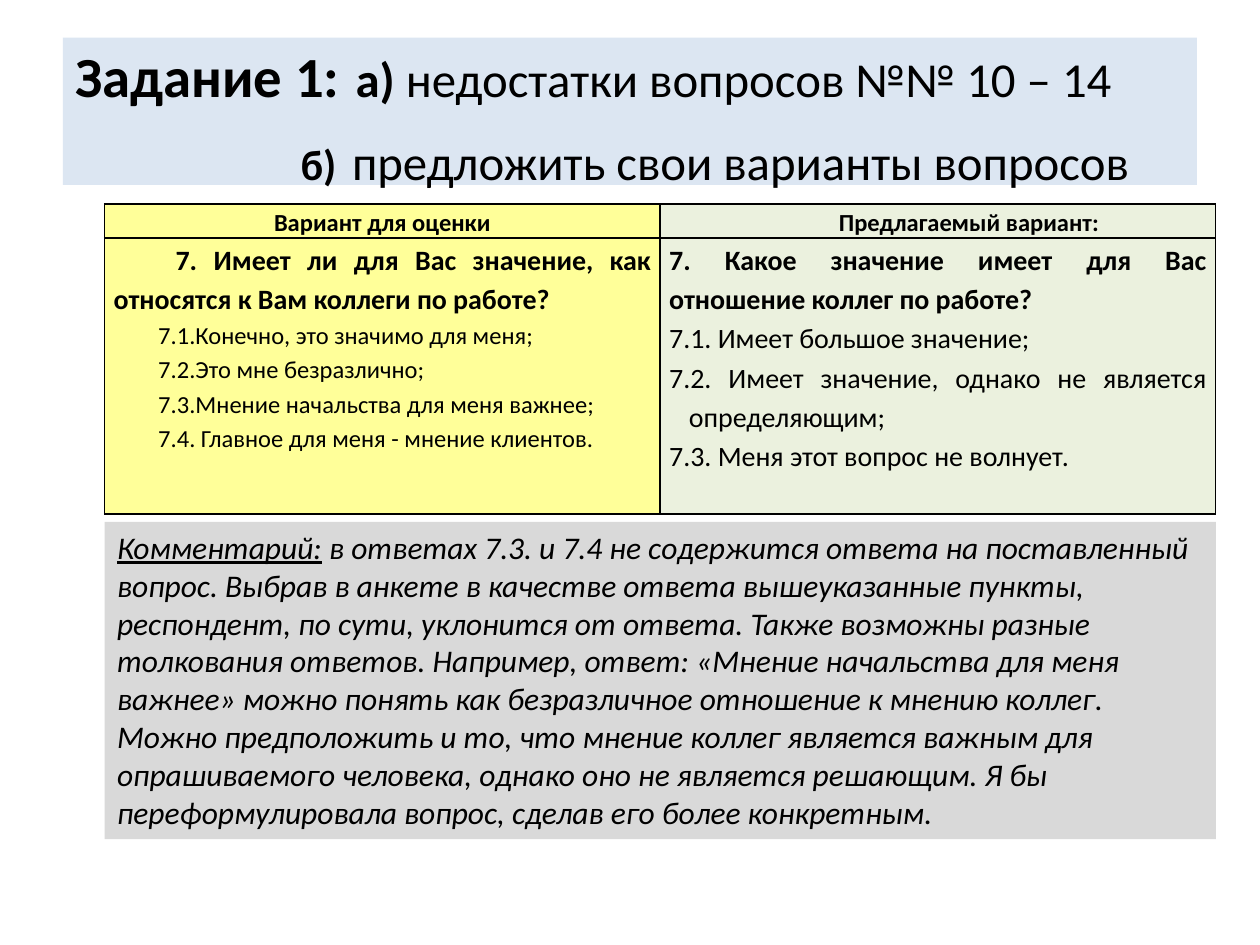
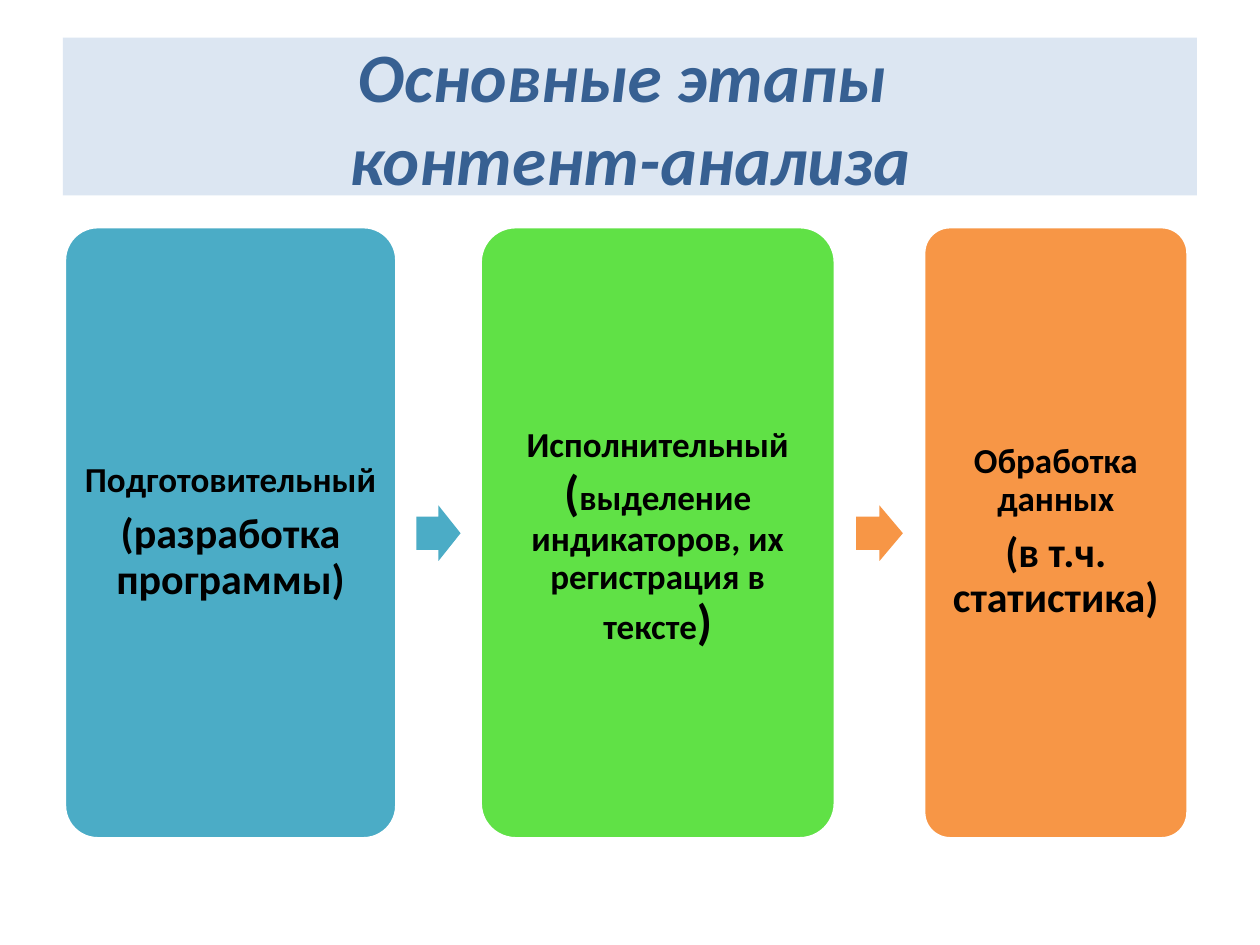
from dataclasses import dataclass

from lxml import etree
from pptx import Presentation
from pptx import util as u
from pptx.dml.color import RGBColor
from pptx.enum import shapes, text
from pptx.oxml import ns

Cm, Pt = u.Cm, u.Pt
ALIGN, KIND = text.PP_ALIGN, shapes.MSO_SHAPE


@dataclass(frozen=True)
class Theme:
    font: str = "Calibri"
    ink: str = "000000"
    paper: str = "FFFFFF"
    band: str = "DCE6F2"
    navy: str = "376092"
    yellow: str = "FFFF99"
    sage: str = "EBF1DE"
    grey: str = "D9D9D9"
    teal: str = "4BACC6"
    green: str = "60E146"
    orange: str = "F79646"
    title: float = 39.6
    task: float = 32.4
    goal: float = 27.9
    mark: float = 24.3
    paren: float = 28
    detail: float = 24
    stage: float = 20
    note: float = 18
    ask: float = 16
    small: float = 14


T = Theme()


def write(para, runs, align=ALIGN.LEFT, left=0, first=0, color=T.ink):
    """Fill a paragraph with runs of (text, size, style letters b, i, u)."""
    para.alignment = align
    if left or first:
        props = para._p.get_or_add_pPr()
        props.set("marL", str(Cm(left)))
        props.set("indent", str(Cm(first)))
    for words, size, style in runs:
        run = para.add_run()
        run.text = words
        font = run.font
        font.name, font.size = T.font, Pt(size)
        font.bold, font.italic = "b" in style, "i" in style
        font.underline = "u" in style
        font.color.rgb = RGBColor.from_string(color)


def lines(frame, count):
    """Return the given number of paragraphs of a frame."""
    while len(frame.paragraphs) < count:
        frame.add_paragraph()
    return frame.paragraphs


def block(slide, kind, box, fill, edge=None):
    shape = slide.shapes.add_shape(kind, *map(Cm, box))
    shape.shadow.inherit = False
    shape.fill.solid()
    shape.fill.fore_color.rgb = RGBColor.from_string(fill)
    if edge:
        shape.line.color.rgb = RGBColor.from_string(edge)
        shape.line.width = Pt(2)
    else:
        shape.line.fill.background()
    frame = shape.text_frame
    frame.word_wrap = True
    frame.vertical_anchor = text.MSO_ANCHOR.MIDDLE
    return shape


def banner(slide, high, rows, **look):
    """Draw the title band; each row is (runs, left indent)."""
    band = block(slide, KIND.RECTANGLE, (1.27, 0.76, 22.86, high), T.band)
    for para, (runs, left) in zip(lines(band.text_frame, len(rows)), rows):
        write(para, runs, left=left, **look)


def border(cell):
    props = cell._tc.get_or_add_tcPr()
    for side in ("lnL", "lnR", "lnT", "lnB"):
        line = etree.SubElement(props, ns.qn("a:" + side), w=str(Pt(1)))
        fill = etree.SubElement(line, ns.qn("a:solidFill"))
        etree.SubElement(fill, ns.qn("a:srgbClr"), val=T.ink)


def fill_cell(cell, color, rows):
    """Fill a cell; each row is (text, size, style, align, left, first)."""
    border(cell)
    cell.fill.solid()
    cell.fill.fore_color.rgb = RGBColor.from_string(color)
    cell.margin_left = cell.margin_right = Cm(0.18)
    cell.margin_top = cell.margin_bottom = 0
    for para, row in zip(lines(cell.text_frame, len(rows)), rows):
        words, size, style, align, left, first = row
        write(para, [(words, size, style)], align, left, first)
        para.line_spacing = 1.15


def compare(slide, columns):
    """Draw the table of variants; each column is (colour, head, body)."""
    frame = slide.shapes.add_table(2, 2, Cm(2.11), Cm(4.11), Cm(22.4), Cm(6.25))
    table = frame.table
    table.first_row = table.horz_banding = False
    for row, high in zip(table.rows, (0.69, 5.56)):
        row.height = Cm(high)
    for col, (color, head, body) in enumerate(columns):
        table.columns[col].width = Cm(11.2)
        fill_cell(table.cell(0, col), color, [head])
        fill_cell(table.cell(1, col), color, body)


def panel(slide, left, wide, color, rows):
    shape = block(slide, KIND.ROUNDED_RECTANGLE,
                  (left, 4.57, wide, 12.34), color, T.paper)
    shape.adjustments[0] = 0.1
    frame = shape.text_frame
    frame.margin_left = frame.margin_right = Cm(0.2)
    for para, runs in zip(lines(frame, len(rows)), rows):
        write(para, runs, ALIGN.CENTER)
        para.line_spacing = 0.9
        para.space_after = Pt(7)


def arrow(slide, start, end, color):
    """Centre an arrow in the gap between two panels."""
    wide = 0.53 * (end - start)
    left = (start + end - wide) / 2
    shape = block(slide, KIND.RIGHT_ARROW, (left, 10.19, wide, 1.12), color)
    shape.adjustments[0] = 0.6


def task(slide):
    gap = (" ", T.title, "b")
    banner(slide, 2.97, [
        ([("Задание 1:", T.task, "b"), gap, ("а) ", T.goal, "b"),
          ("недостатки вопросов №№ 10 – 14", T.goal, "")], 0),
        ([("б)", T.mark, "b"), gap,
          ("предложить свои варианты вопросов", T.goal, "")], 4.54),
    ])
    old = ("7.1.Конечно, это значимо для меня;",
           "7.2.Это мне безразлично;",
           "7.3.Мнение начальства для меня важнее;",
           "7.4. Главное для меня - мнение клиентов.")
    new = ("7.1. Имеет большое значение;",
           "7.2. Имеет значение, однако не является определяющим;",
           "7.3. Меня этот вопрос не волнует.")
    mid, full = ALIGN.CENTER, ALIGN.JUSTIFY
    compare(slide, [
        (T.yellow, ("Вариант для оценки", T.small, "b", mid, 0, 0),
         [("7. Имеет ли для Вас значение, как относятся к Вам коллеги "
           "по работе?", T.ask, "b", full, 0, 1.25)]
         + [(item, T.small, "", full, 0, 0.9) for item in old]),
        (T.sage, ("Предлагаемый вариант:", T.small, "b", mid, 0, 1.25),
         [("7. Какое значение имеет для Вас отношение коллег по работе?",
           T.ask, "b", full, 0, 0)]
         + [(item, T.ask, "", full, 0.4, -0.4) for item in new]),
    ])
    note = block(slide, KIND.RECTANGLE, (2.11, 10.52, 22.4, 6.4), T.grey)
    note.text_frame.vertical_anchor = text.MSO_ANCHOR.TOP
    write(note.text_frame.paragraphs[0], [
        ("Комментарий:", T.note, "iu"),
        (" в ответах 7.3. и 7.4 не содержится ответа на поставленный вопрос. "
         "Выбрав в анкете в качестве ответа вышеуказанные пункты, респондент, "
         "по сути, уклонится от ответа. Также возможны разные толкования "
         "ответов. Например, ответ: «Мнение начальства для меня важнее» можно "
         "понять как безразличное отношение к мнению коллег. Можно "
         "предположить и то, что мнение коллег является важным для "
         "опрашиваемого человека, однако оно не является решающим. Я бы "
         "переформулировала вопрос, сделав его более конкретным.",
         T.note, "i"),
    ])


def stages(slide):
    names = ("Основные этапы ", "контент-анализа")
    banner(slide, 3.18, [([(name, T.title, "bi")], 0) for name in names],
           align=ALIGN.CENTER, color=T.navy)
    steps = [
        (1.3, 6.7, T.teal,
         [[("Подготовительный", T.stage, "b")],
          [("(разработка программы)", T.detail, "b")]]),
        (9.68, 7.16, T.green,
         [[("Исполнительный", T.stage, "b"), (" (", T.paren, "b"),
           ("выделение индикаторов, их регистрация в тексте", T.stage, "b"),
           (")", T.paren, "b")]]),
        (18.62, 5.33, T.orange,
         [[("Обработка данных", T.stage, "b")],
          [("(в т.ч. статистика)", T.detail, "b")]]),
    ]
    for step in steps:
        panel(slide, *step)
    for prev, step, color in zip(steps, steps[1:], (T.teal, T.orange)):
        arrow(slide, prev[0] + prev[1], step[0], color)


def main():
    deck = Presentation()
    deck.slide_width, deck.slide_height = Cm(25.4), Cm(19.05)
    for draw in (task, stages):
        draw(deck.slides.add_slide(deck.slide_layouts[6]))
    deck.save("out.pptx")


if __name__ == "__main__":
    main()
